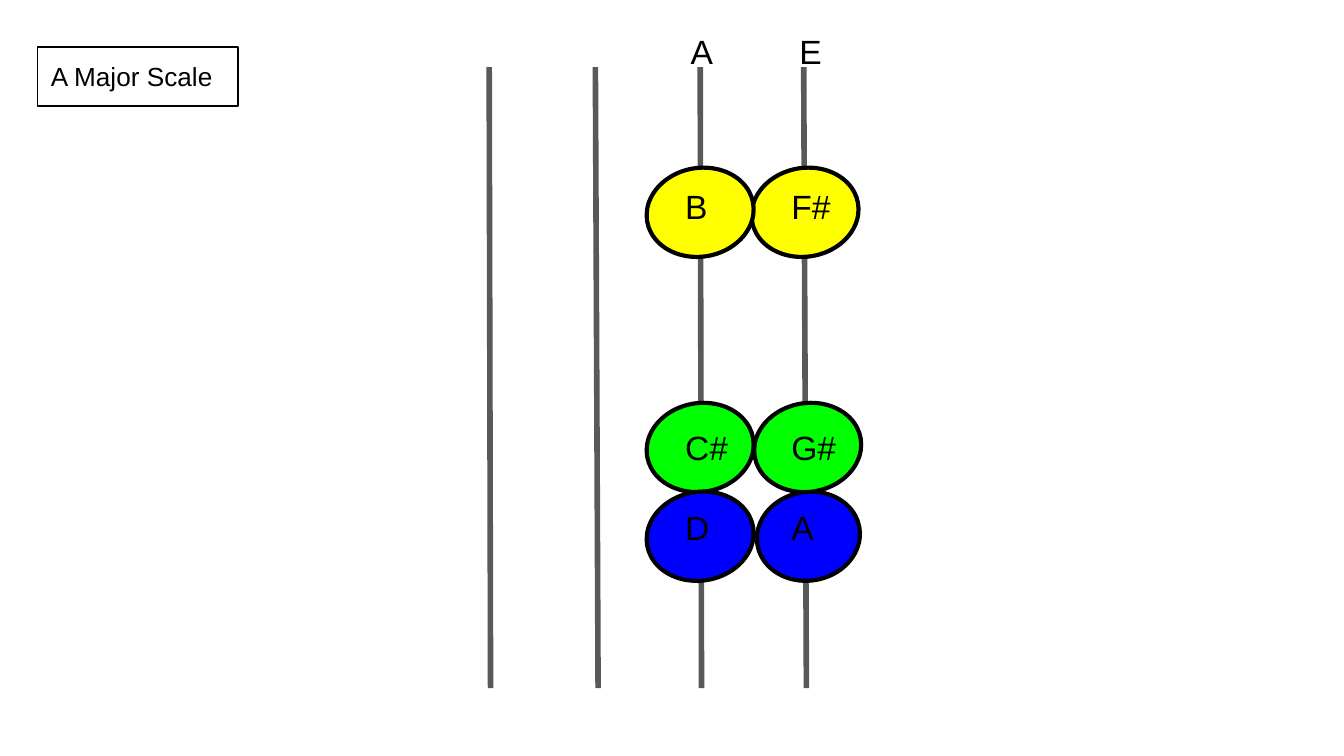
import pptx
import pptx.dml.color
import pptx.enum.shapes
import pptx.enum.text
import pptx.util
from lxml import etree
from pptx.oxml.ns import qn
from pptx.util import Inches


def color(hex_value):
    return pptx.dml.color.RGBColor.from_string(hex_value)


def write_lines(shape, lines, size):
    """Fill a shape with left-aligned black Arial, one paragraph per line."""
    frame = shape.text_frame
    frame.word_wrap = True
    frame.vertical_anchor = pptx.enum.text.MSO_ANCHOR.TOP
    frame.margin_left = frame.margin_right = Inches(0.1)
    frame.margin_top = frame.margin_bottom = Inches(0.1)
    frame.text = "\n".join(lines)
    for paragraph in frame.paragraphs:
        paragraph.alignment = pptx.enum.text.PP_ALIGN.LEFT
        for run in paragraph.runs:
            run.font.name = "Arial"
            run.font.size = pptx.util.Pt(size)
            run.font.color.rgb = color("000000")


prs = pptx.Presentation()
prs.slide_width = Inches(10)
prs.slide_height = Inches(10 * 9 / 16)
slide = prs.slides.add_slide(prs.slide_layouts[6])
shapes = slide.shapes

# Strings, leaning slightly to the right
for top_x, bottom_x in [(3.64, 3.65), (4.43, 4.45), (5.21, 5.22), (5.98, 6)]:
    string = shapes.add_connector(
        pptx.enum.shapes.MSO_CONNECTOR.STRAIGHT,
        Inches(top_x), Inches(0.5), Inches(bottom_x), Inches(5.12))
    string.line.color.rgb = color("595959")
    string.line.width = pptx.util.Pt(3)
    etree.SubElement(string._element.spPr, qn("a:effectLst"))

# Title
title = shapes.add_shape(pptx.enum.shapes.MSO_SHAPE.RECTANGLE,
                         Inches(0.28), Inches(0.35), Inches(1.49), Inches(0.44))
title.shadow.inherit = False
title.fill.background()
title.line.color.rgb = color("000000")
title.line.width = pptx.util.Pt(0.75)
write_lines(title, ["A Major Scale"], 14)

# Finger positions: each finger has its own height on the neck and colour
fingers = {"first": (1.25, "FFFF00"), "third": (3, "00FF00"), "fourth": (3.66, "0000FF")}
positions = [
    ("first", 5.59, 0.8), ("fourth", 5.63, 0.77), ("third", 5.61, 0.8),
    ("first", 4.81, 0.8), ("third", 4.81, 0.8), ("fourth", 4.81, 0.8),
]
for finger, left, width in positions:
    top, fill = fingers[finger]
    dot = shapes.add_shape(pptx.enum.shapes.MSO_SHAPE.OVAL,
                           Inches(left), Inches(top), Inches(width), Inches(0.66))
    dot.rotation = 350.1
    dot.shadow.inherit = False
    dot.fill.solid()
    dot.fill.fore_color.rgb = color(fill)
    dot.line.color.rgb = color("000000")
    dot.line.width = pptx.util.Pt(2.25)

# Open string names
for name, left, width in [("E", 5.85, 0.28), ("A", 5.04, 0.35)]:
    string_name = shapes.add_textbox(Inches(left), Inches(0.13), Inches(width), Inches(0.3))
    write_lines(string_name, [name], 18)

# Note names, with a tab stop for the second string
note_names = shapes.add_textbox(Inches(5), Inches(1.28), Inches(3.4), Inches(3.28))
write_lines(note_names, ["B\tF#", "C#\tG#", "D\tA"], 18)
for paragraph, gap in zip(note_names.text_frame.paragraphs, [0, 108, 21]):
    paragraph.space_before = pptx.util.Pt(gap)
    tabs = etree.SubElement(paragraph._p.get_or_add_pPr(), qn("a:tabLst"))
    etree.SubElement(tabs, qn("a:tab"), pos=str(Inches(0.79)), algn="l")

prs.save("out.pptx")
